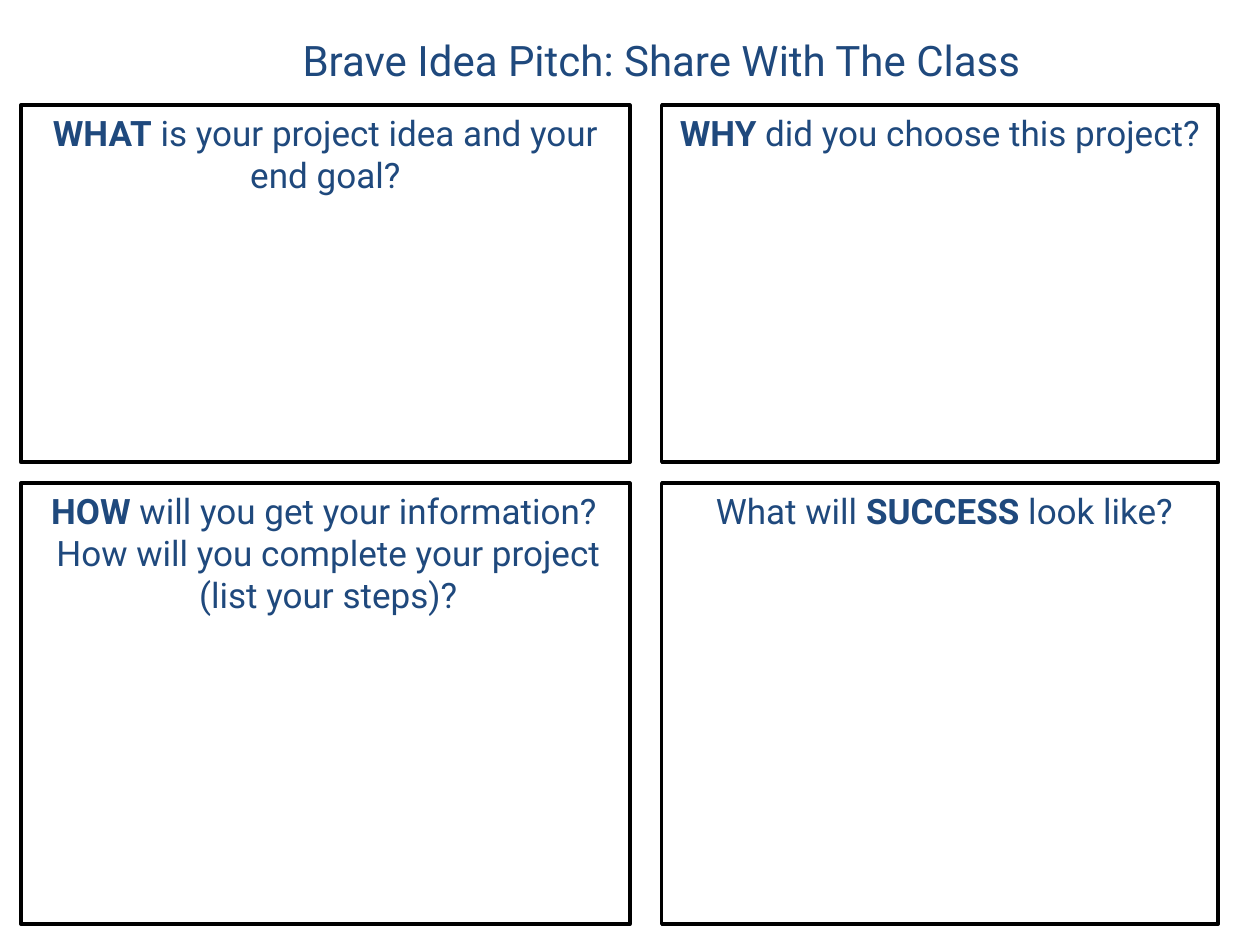
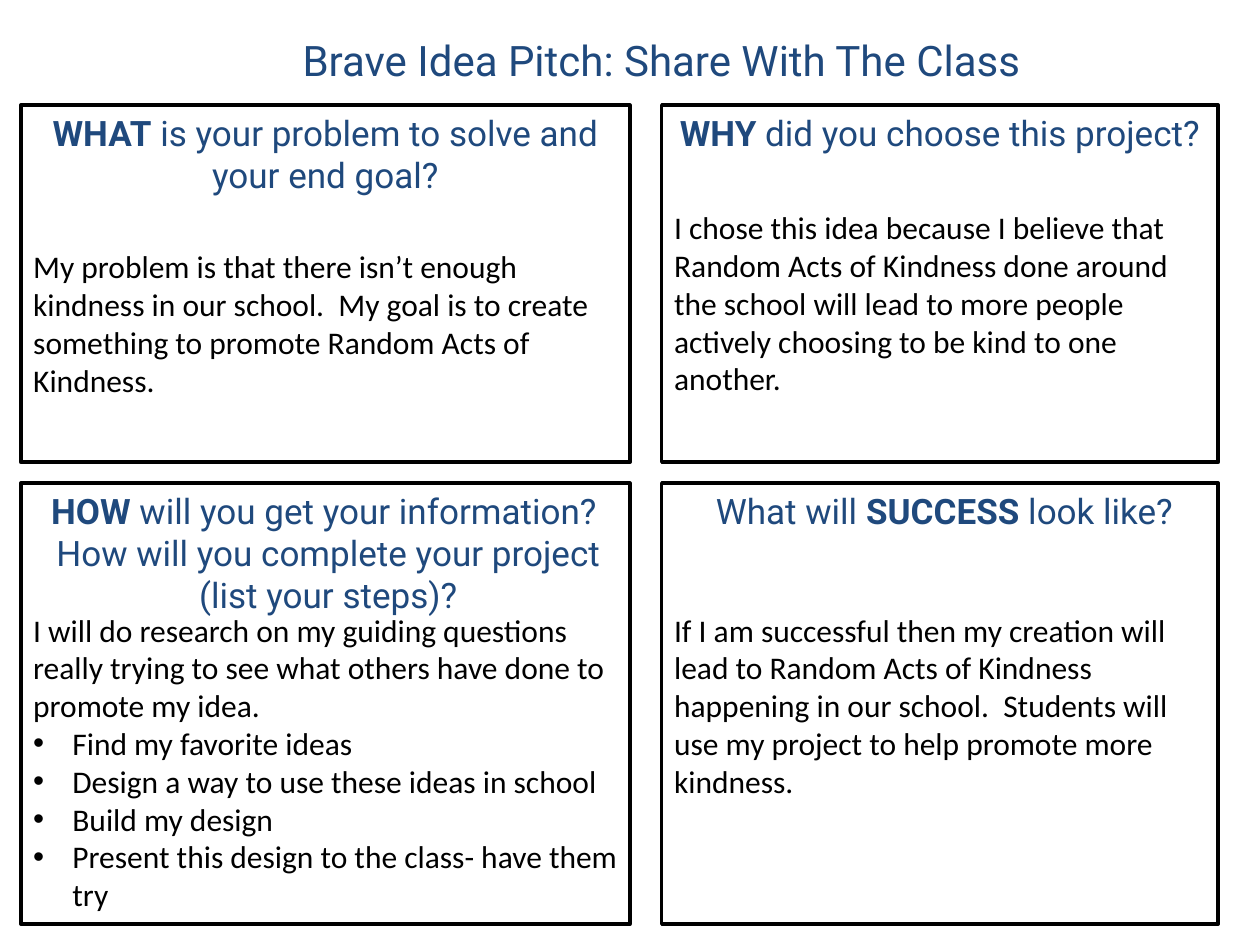
from lxml import etree
from pptx import Presentation
from pptx.dml.color import RGBColor
from pptx.enum import shapes, text
from pptx.oxml import ns
from pptx.util import Cm, Pt

# Shared style
NAVY, BLACK, WHITE = "1F497D", "000000", "FFFFFF"
HEAD_FONT, BODY_FONT = "Roboto", "Calibri"
TITLE = "Brave Idea Pitch: Share With The Class"
INDENT = Cm(0.79)

# Grid in cm: (left, width) of columns, (top, height) of rows
COLS = [(0.42, 12.28), (13.34, 11.22)]
ROWS = [(2.12, 7.2), (9.74, 8.89)]

# Questions, row by row; ** encloses bold words
WHAT_IDEA = "**WHAT** is your project idea and your end goal?"
WHAT_PROBLEM = "**WHAT** is your problem to solve and your end goal?"
WHY = "**WHY** did you choose this project?"
HOW = ("**HOW** will you get your information?  "
       "How will you complete your project (list your steps)?")
SUCCESS = " What will **SUCCESS** look like?"

# Answers, row by row: (distance below the panel top, paragraph, bullets)
ANSWERS = [
    (2.87, "My problem is that there isn’t enough kindness in our school.  "
           "My goal is to create something to promote Random Acts of Kindness.", []),
    (2.08, "I chose this idea because I believe that Random Acts of Kindness done "
           "around the school will lead to more people actively choosing to be "
           "kind to one another.", []),
    (2.57, "I will do research on my guiding questions really trying to see what "
           "others have done to promote my idea.",
     ["Find my favorite ideas", "Design a way to use these ideas in school",
      "Build my design", "Present this design to the class- have them try"]),
    (2.57, "If I am successful then my creation will lead to Random Acts of Kindness "
           "happening in our school.  Students will use my project to help promote "
           "more kindness.", []),
]


def color(value):
    return RGBColor.from_string(value)


def write(p, content, size=18, font=BODY_FONT, fill=BLACK,
          align=text.PP_ALIGN.LEFT, bullet=False):
    """Fill a paragraph; words between ** are bold."""
    p.alignment = align
    if bullet:
        pPr = p._p.get_or_add_pPr()
        pPr.set("marL", str(INDENT))
        pPr.set("indent", str(-INDENT))
        etree.SubElement(pPr, ns.qn("a:buFont")).set("typeface", "Arial")
        etree.SubElement(pPr, ns.qn("a:buChar")).set("char", "•")
    for i, part in enumerate(content.split("**")):
        if part:
            r = p.add_run()
            r.text = part
            r.font.size, r.font.name, r.font.bold = Pt(size), font, i % 2 == 1
            r.font.color.rgb = color(fill)


def add_heading(s, content, left, top, width, height, size):
    tf = s.shapes.add_textbox(Cm(left), Cm(top), Cm(width), Cm(height)).text_frame
    tf.word_wrap = True
    write(tf.paragraphs[0], content, size=size, font=HEAD_FONT, fill=NAVY,
          align=text.PP_ALIGN.CENTER)


def add_panel(s, left, top, width, height):
    sp = s.shapes.add_shape(shapes.MSO_SHAPE.RECTANGLE,
                            Cm(left), Cm(top), Cm(width), Cm(height))
    sp.shadow.inherit = False
    sp.fill.solid()
    sp.fill.fore_color.rgb = color(WHITE)
    sp.line.color.rgb = color(BLACK)
    sp.line.width = Pt(2)
    etree.SubElement(sp.line._get_or_add_ln(), ns.qn("a:round"))
    return sp


def add_answer(sp, offset, content, bullets):
    tf = sp.text_frame
    tf.word_wrap = True
    tf.vertical_anchor = text.MSO_ANCHOR.TOP
    tf.margin_top, tf.margin_bottom = Cm(offset), 0
    write(tf.paragraphs[0], content)
    for item in bullets:
        write(tf.add_paragraph(), item, bullet=True)


def add_pitch_slide(prs, questions, answers=None):
    s = prs.slides.add_slide(prs.slide_layouts[6])
    add_heading(s, TITLE, 4.87, 0.58, 16.93, 1.28, size=24)
    cells = [(col, row) for row in ROWS for col in COLS]
    for i, ((left, width), (top, height)) in enumerate(cells):
        sp = add_panel(s, left, top, width, height)
        if answers:
            add_answer(sp, *answers[i])
        # The longest question sits slightly to the right
        shift = 0.06 if questions[i] == HOW else 0
        add_heading(s, questions[i], left + shift, top, width, 1.11, size=20)


def main():
    prs = Presentation()
    prs.slide_width, prs.slide_height = Cm(25.4), Cm(19.05)
    # Empty worksheet, then a worked example
    add_pitch_slide(prs, [WHAT_IDEA, WHY, HOW, SUCCESS])
    add_pitch_slide(prs, [WHAT_PROBLEM, WHY, HOW, SUCCESS], ANSWERS)
    prs.save("out.pptx")


if __name__ == "__main__":
    main()
